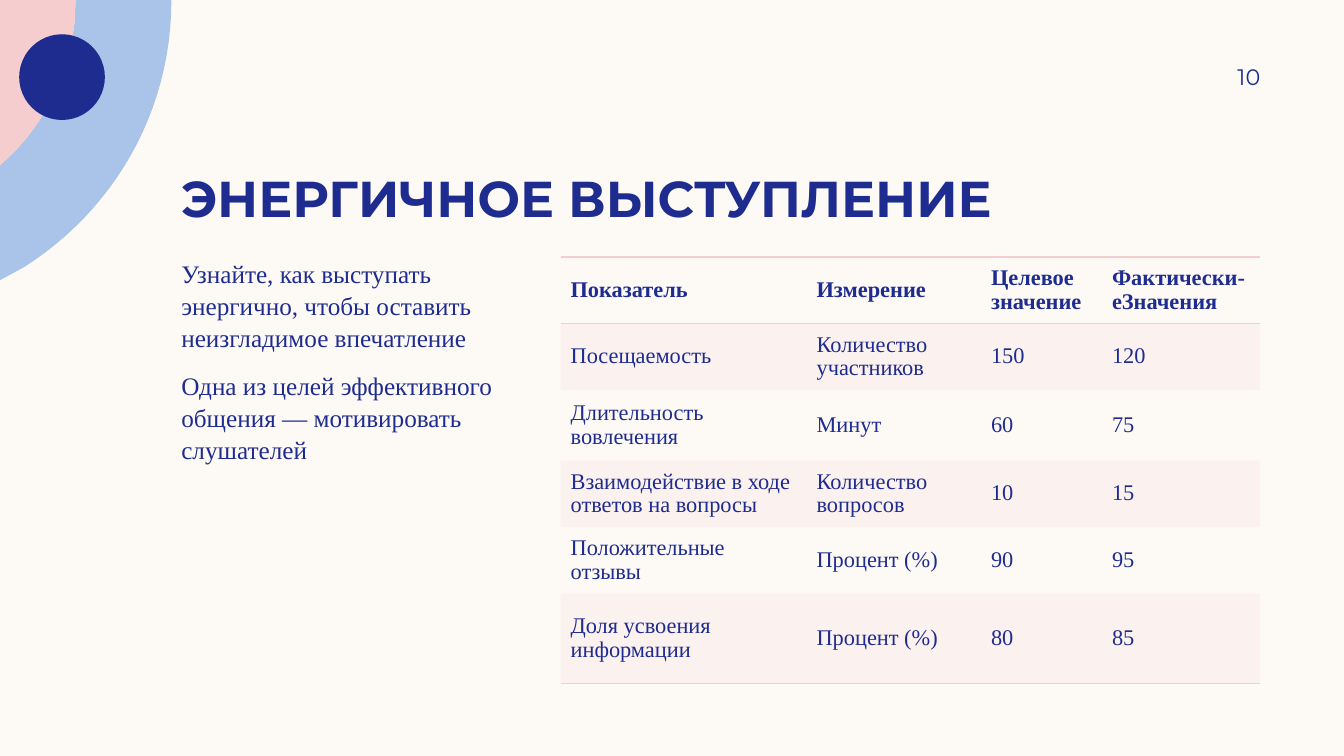
from lxml.etree import SubElement, fromstring
from pptx import Presentation
from pptx.dml.color import RGBColor
from pptx.enum.shapes import MSO_SHAPE
from pptx.enum.text import MSO_ANCHOR, PP_ALIGN
from pptx.oxml.ns import nsdecls, qn
from pptx.util import Inches, Pt

COLORS = {"cream": "FDFAF6", "navy": "1F2C8F", "blue": "AAC3E8", "pink": "F5CDCE"}
HEADING_FONT, TEXT_FONT = "Montserrat", "Times New Roman"
PLAIN_TABLE_STYLE = "{2D5ABB26-0587-4C30-8999-92F81FD0307C}"
CURVE_STEPS = 24


def curve(p0, p1, p2, p3):
    """Points along a cubic curve, without its start."""
    points = []
    for step in range(1, CURVE_STEPS + 1):
        t = step / CURVE_STEPS
        weights = ((1 - t) ** 3, 3 * t * (1 - t) ** 2, 3 * t * t * (1 - t), t ** 3)
        points.append(tuple(sum(w * p[axis] for w, p in zip(weights, (p0, p1, p2, p3)))
                            for axis in (0, 1)))
    return points


class SlideBuilder:
    def __init__(self, slide):
        self.slide = slide
        self.shapes = slide.shapes

    def color(self, name):
        return RGBColor.from_string(COLORS[name])

    def background(self, name):
        fill = self.slide.background.fill
        fill.solid()
        fill.fore_color.rgb = self.color(name)

    def paint(self, shape, name):
        shape.shadow.inherit = False
        shape.fill.solid()
        shape.fill.fore_color.rgb = self.color(name)
        shape.line.fill.background()

    def outline(self, points, name):
        points = [(Inches(x), Inches(y)) for x, y in points]
        builder = self.shapes.build_freeform(*points[0])
        builder.add_line_segments(points[1:], close=True)
        self.paint(builder.convert_to_shape(), name)

    def circle(self, left, top, size, name):
        box = map(Inches, (left, top, size, size))
        self.paint(self.shapes.add_shape(MSO_SHAPE.OVAL, *box), name)

    def run(self, paragraph, text, font, size, bold=False):
        run = paragraph.add_run()
        run.text = text
        run.font.name, run.font.size, run.font.bold = font, Pt(size), bold
        run.font.color.rgb = self.color("navy")

    def text(self, box, paragraphs, font, size, bold=False, anchor=MSO_ANCHOR.TOP,
             align=PP_ALIGN.LEFT, insets=(0.1, 0, 0.1, 0), after=0, spacing=1.0):
        frame = self.shapes.add_textbox(*map(Inches, box)).text_frame
        frame.word_wrap = True
        frame.vertical_anchor = anchor
        (frame.margin_left, frame.margin_top,
         frame.margin_right, frame.margin_bottom) = map(Inches, insets)
        for index, words in enumerate(paragraphs):
            paragraph = frame.add_paragraph() if index else frame.paragraphs[0]
            paragraph.alignment = align
            paragraph.space_after = Pt(after)
            paragraph.line_spacing = spacing
            self.run(paragraph, words, font, size, bold)

    def border(self, cell, side, name):
        line = fromstring(
            f'<a:{side} {nsdecls("a")} w="{Pt(1)}"><a:solidFill>'
            f'<a:srgbClr val="{COLORS[name]}"/></a:solidFill></a:{side}>')
        cell._tc.get_or_add_tcPr().insert(0, line)

    def tint(self, cell, name, percent):
        cell.fill.solid()
        cell.fill.fore_color.rgb = self.color(name)
        tone = cell._tc.tcPr.find(".//" + qn("a:srgbClr"))
        SubElement(tone, qn("a:alpha"), val=str(percent * 1000))

    def table(self, left, top, widths, heights, rows, size):
        box = map(Inches, (left, top, sum(widths), sum(heights)))
        table = self.shapes.add_table(len(rows), len(widths), *box).table
        table._tbl.tblPr.find(qn("a:tableStyleId")).text = PLAIN_TABLE_STYLE
        table.horz_banding = False
        for column, width in zip(table.columns, widths):
            column.width = Inches(width)
        for r, (values, height) in enumerate(zip(rows, heights)):
            table.rows[r].height = Inches(height)
            for c, value in enumerate(values):
                cell = table.cell(r, c)
                cell.vertical_anchor = MSO_ANCHOR.MIDDLE
                paragraph = cell.text_frame.paragraphs[0]
                paragraph.line_spacing = 0.95
                self.run(paragraph, value, TEXT_FONT, size, bold=r == 0)
                if r % 2:
                    self.tint(cell, "pink", 20)
                else:
                    cell.fill.background()
                if r in (0, len(rows) - 1):
                    self.border(cell, "lnB", "pink")
                if r == 0:
                    self.border(cell, "lnT", "pink")


def main():
    deck = Presentation()
    deck.slide_width, deck.slide_height = Inches(13.33), Inches(7.5)
    page = SlideBuilder(deck.slides.add_slide(deck.slide_layouts[6]))
    page.background("cream")

    # Corner rings and dot
    inner_edge = [(0.75, 0), (0.74, 0.22),
                  *curve((0.74, 0.22), (0.68, 0.73), (0.46, 1.19), (0.11, 1.54)),
                  (0, 1.64)]
    outer_edge = [(1.7, 0), (1.7, 0.01),
                  *curve((1.7, 0.01), (1.7, 1.12), (1.12, 2.09), (0.24, 2.65)),
                  (0, 2.78)]
    page.outline(outer_edge + inner_edge[::-1], "blue")
    page.outline([(0, 0)] + inner_edge, "pink")
    page.circle(0.19, 0.34, 0.85, "navy")

    # Title and message
    page.text((1.7, 1.19, 10.8, 1.07), ["ЭНЕРГИЧНОЕ ВЫСТУПЛЕНИЕ"],
              HEADING_FONT, 36, bold=True, anchor=MSO_ANCHOR.BOTTOM)
    page.text((1.7, 2.55, 3.49, 4.05),
              ["Узнайте, как выступать энергично, чтобы оставить неизгладимое впечатление",
               "Одна из целей эффективного общения — мотивировать слушателей"],
              TEXT_FONT, 18, after=12, spacing=1.05)

    # Engagement metrics
    metrics = [
        ("Показатель", "Измерение", "Целевое значение", "Фактически-еЗначения"),
        ("Посещаемость", "Количество участников", "150", "120"),
        ("Длительность вовлечения", "Минут", "60", "75"),
        ("Взаимодействие в ходе ответов на вопросы", "Количество вопросов", "10", "15"),
        ("Положительные отзывы", "Процент (%)", "90", "95"),
        ("Доля усвоения информации", "Процент (%)", "80", "85"),
    ]
    page.table(5.56, 2.55, (2.44, 1.73, 1.2, 1.57),
               (0.66, 0.66, 0.7, 0.66, 0.66, 0.89), metrics, 16)

    # Page number
    page.text((11.33, 0.5, 1.17, 0.52), ["10"], HEADING_FONT, 16,
              anchor=MSO_ANCHOR.MIDDLE, align=PP_ALIGN.RIGHT,
              insets=(0.1, 0.05, 0, 0.05))

    deck.save("out.pptx")


if __name__ == "__main__":
    main()
